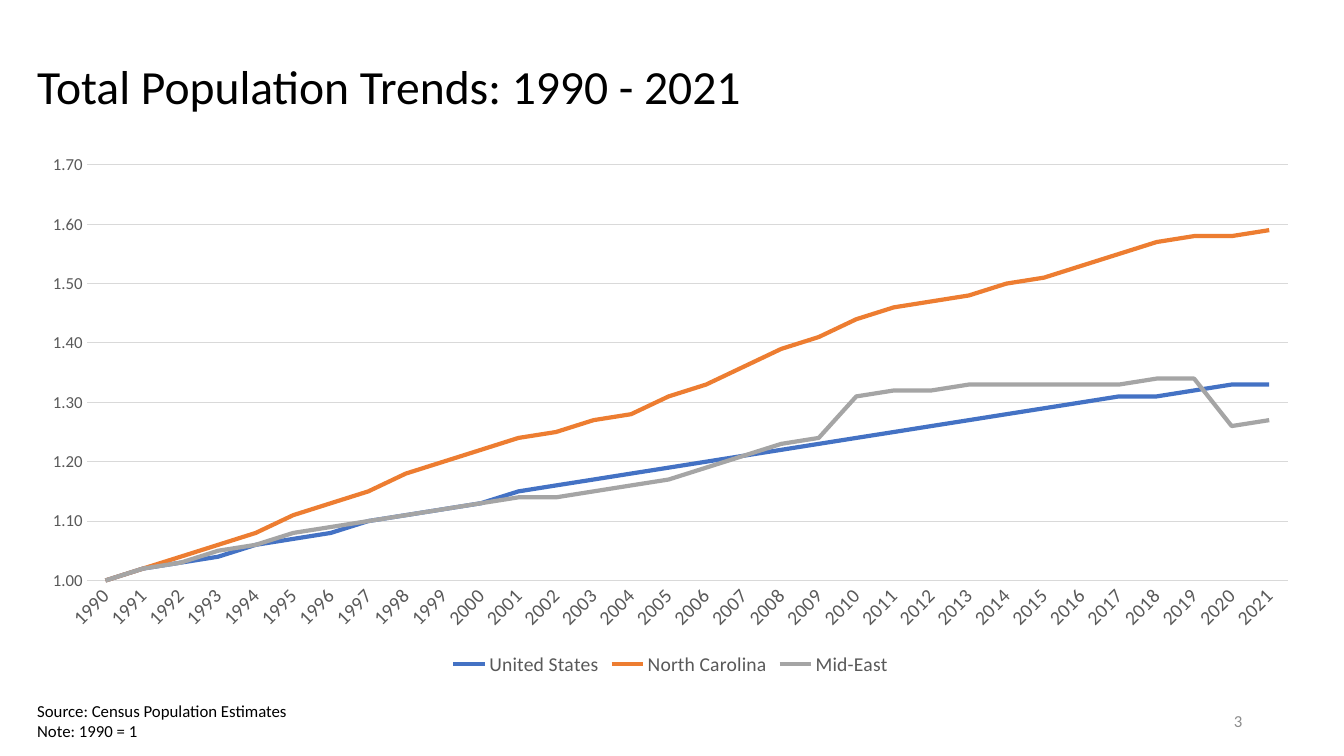
from pptx import Presentation
from pptx.chart.data import CategoryChartData
from pptx.dml.color import RGBColor
from pptx.enum.chart import XL_CHART_TYPE, XL_LEGEND_POSITION, XL_TICK_MARK
from pptx.enum.text import MSO_ANCHOR, PP_ALIGN
from pptx.util import Inches, Pt

TITLE = "Total Population Trends: 1990 - 2021"
NOTES = ["Source: Census Population Estimates", "Note: 1990 = 1"]
PAGE = "3"
YEARS = [str(year) for year in range(1990, 2022)]
TRENDS = {
    "United States": [
        1, 1.02, 1.03, 1.04, 1.06, 1.07, 1.08, 1.1, 1.11, 1.12, 1.13,
        1.15, 1.16, 1.17, 1.18, 1.19, 1.2, 1.21, 1.22, 1.23, 1.24, 1.25,
        1.26, 1.27, 1.28, 1.29, 1.3, 1.31, 1.31, 1.32, 1.33, 1.33],
    "North Carolina": [
        1, 1.02, 1.04, 1.06, 1.08, 1.11, 1.13, 1.15, 1.18, 1.2, 1.22,
        1.24, 1.25, 1.27, 1.28, 1.31, 1.33, 1.36, 1.39, 1.41, 1.44, 1.46,
        1.47, 1.48, 1.5, 1.51, 1.53, 1.55, 1.57, 1.58, 1.58, 1.59],
    "Mid-East": [
        1, 1.02, 1.03, 1.05, 1.06, 1.08, 1.09, 1.1, 1.11, 1.12, 1.13,
        1.14, 1.14, 1.15, 1.16, 1.17, 1.19, 1.21, 1.23, 1.24, 1.31, 1.32,
        1.32, 1.33, 1.33, 1.33, 1.33, 1.33, 1.34, 1.34, 1.26, 1.27],
}


class Theme:
    font = "Calibri"
    ink = "000000"
    label = "595959"
    page = "8C8C8C"
    grid = "D9D9D9"
    lines = ["4472C4", "ED7D31", "A5A5A5"]
    title = 34
    large = 14
    small = 12


def style(font, size, color):
    font.name = Theme.font
    font.size = Pt(size)
    font.color.rgb = RGBColor.from_string(color)


def stroke(line, color, width):
    line.color.rgb = RGBColor.from_string(color)
    line.width = Pt(width)


def write(text, box, size=Theme.small, color=Theme.ink, align=PP_ALIGN.LEFT,
          anchor=MSO_ANCHOR.TOP, wrap=True, space=None):
    frame = slide.shapes.add_textbox(*map(Inches, box)).text_frame
    frame.word_wrap = wrap
    frame.vertical_anchor = anchor
    frame.text = text
    for para in frame.paragraphs:
        para.alignment = align
        para.line_spacing = space
        for run in para.runs:
            style(run.font, size, color)


def plot(box):
    data = CategoryChartData(number_format="0.00")
    data.categories = YEARS
    for name, values in TRENDS.items():
        data.add_series(name, values)
    chart = slide.shapes.add_chart(
        XL_CHART_TYPE.LINE, *map(Inches, box), data).chart
    style(chart.font, Theme.small, Theme.label)
    chart.has_title = False
    chart.has_legend = True
    chart.legend.position = XL_LEGEND_POSITION.BOTTOM
    chart.legend.include_in_layout = False
    style(chart.legend.font, Theme.large, Theme.label)

    years, index = chart.category_axis, chart.value_axis
    for axis, size in ((years, Theme.large), (index, Theme.small)):
        axis.major_tick_mark = axis.minor_tick_mark = XL_TICK_MARK.NONE
        style(axis.tick_labels.font, size, Theme.label)
    years.has_major_gridlines = False
    stroke(years.format.line, Theme.grid, 0.75)
    years._element.txPr.bodyPr.set("rot", str(-45 * 60000))

    index.minimum_scale, index.maximum_scale = 1, 1.7
    index.major_unit = 0.1
    index.tick_labels.number_format = "0.00"
    index.tick_labels.number_format_is_linked = False
    index.format.line.fill.background()
    stroke(index.major_gridlines.format.line, Theme.grid, 0.75)

    for trend, color in zip(chart.plots[0].series, Theme.lines):
        trend.smooth = False
        stroke(trend.format.line, color, 3)


deck = Presentation()
deck.slide_width, deck.slide_height = Inches(13.33), Inches(7.5)
slide = deck.slides.add_slide(deck.slide_layouts[6])
LEFT, WIDTH = 0.27, 12.76

write(TITLE, (LEFT, 0.34, WIDTH, 1.09), size=Theme.title,
      anchor=MSO_ANCHOR.MIDDLE, space=0.9)
plot((LEFT, 1.43, WIDTH, 5.32))
write(PAGE, (9.42, 6.95, 3, 0.4), color=Theme.page,
      align=PP_ALIGN.RIGHT, anchor=MSO_ANCHOR.MIDDLE)
write("\n".join(NOTES), (LEFT, 6.9, 2.71, 0.5), wrap=False)

deck.save("out.pptx")
